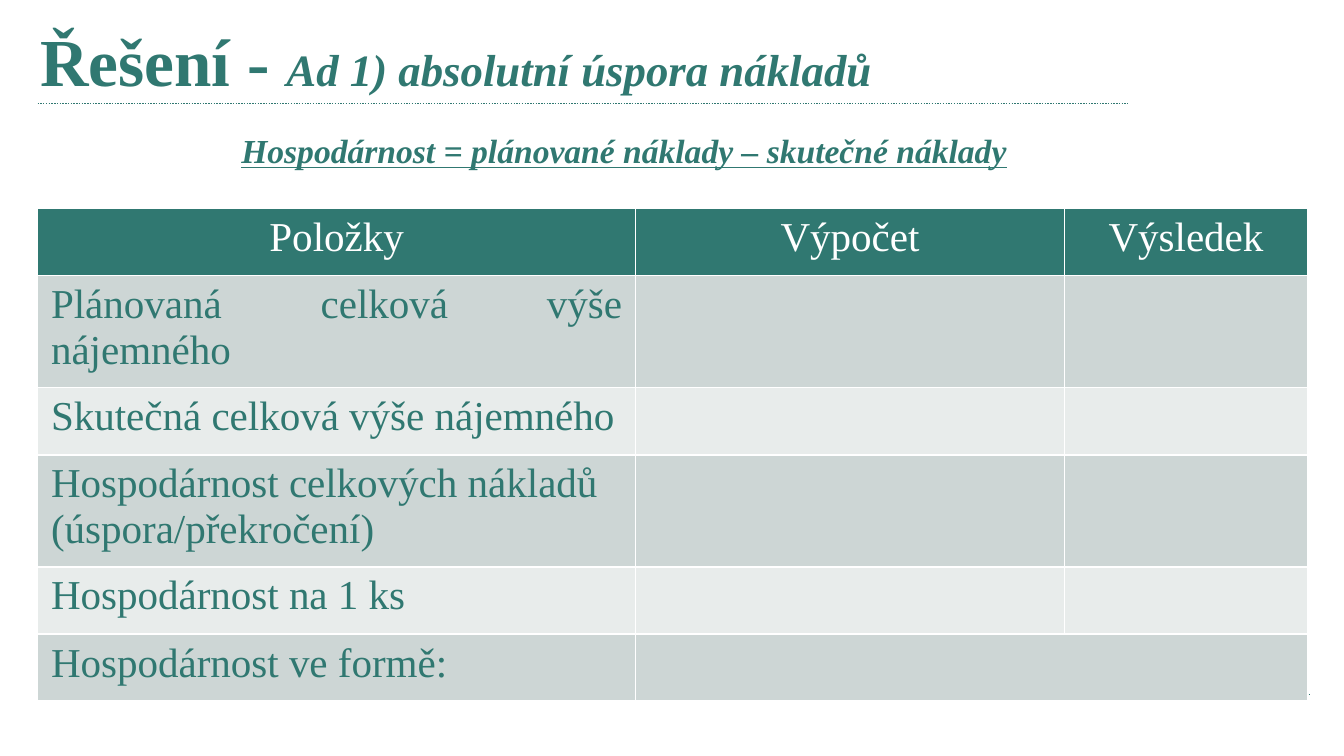
from dataclasses import dataclass

from lxml import etree
from pptx import Presentation
from pptx.dml.color import RGBColor
from pptx.enum.dml import MSO_LINE
from pptx.enum.shapes import MSO_CONNECTOR
from pptx.enum.text import MSO_ANCHOR, PP_ALIGN
from pptx.oxml.ns import qn
from pptx.util import Inches, Pt

STRAIGHT = MSO_CONNECTOR.STRAIGHT
DOTTED = MSO_LINE.ROUND_DOT
MIDDLE = MSO_ANCHOR.MIDDLE
LEFT, CENTER, JUSTIFY = PP_ALIGN.LEFT, PP_ALIGN.CENTER, PP_ALIGN.JUSTIFY


@dataclass(frozen=True)
class Theme:
    font: str = "Times New Roman"
    teal: str = "307871"
    white: str = "FFFFFF"
    bands: tuple = ("CDD6D5", "E8ECEB")
    title: int = 36
    subtitle: int = 24
    formula: int = 18
    cell: int = 22
    rule: float = 0.75
    border: int = 1


THEME = Theme()

HEADERS = ("Položky", "Výpočet", "Výsledek")
ITEMS = (
    ("Plánovaná celková výše nájemného", JUSTIFY),
    ("Skutečná celková výše nájemného", JUSTIFY),
    ("Hospodárnost celkových nákladů (úspora/překročení)", LEFT),
    ("Hospodárnost na 1 ks", LEFT),
    ("Hospodárnost ve formě:", LEFT),
)
COLUMN_WIDTHS = (4.45, 3.19, 1.81)
ROW_HEIGHTS = (0.5, 0.81, 0.5, 0.82, 0.5, 0.5)


def style_font(font, size, color, bold=False, italic=False, underline=False):
    font.name = THEME.font
    font.size = Pt(size)
    font.color.rgb = RGBColor.from_string(color)
    font.bold, font.italic, font.underline = bold, italic, underline


def add_rule(slide, left, right, y):
    rule = slide.shapes.add_connector(
        STRAIGHT, Inches(left), Inches(y), Inches(right), Inches(y))
    rule.line.color.rgb = RGBColor.from_string(THEME.teal)
    rule.line.width = Pt(THEME.rule)
    rule.line.dash_style = DOTTED
    etree.SubElement(rule._element.spPr, qn("a:effectLst"))


def add_text(slide, left, top, width, height):
    box = slide.shapes.add_textbox(
        Inches(left), Inches(top), Inches(width), Inches(height))
    box.text_frame.word_wrap = True
    return box.text_frame


def add_title(slide):
    frame = add_text(slide, 0.2, 0.1, 8.82, 0.79)
    frame.vertical_anchor = MIDDLE
    # A deeper bottom margin lifts the title clear of the rule
    frame.margin_bottom = Inches(0.15)
    heading = frame.paragraphs[0].add_run()
    heading.text = "Řešení - "
    style_font(heading.font, THEME.title, THEME.teal, bold=True)
    topic = frame.paragraphs[0].add_run()
    topic.text = "Ad 1) absolutní úspora nákladů"
    style_font(topic.font, THEME.subtitle, THEME.teal, bold=True, italic=True)


def add_formula(slide):
    formula = add_text(slide, 0.43, 0.92, 8.43, 0.4).paragraphs[0]
    formula.text = "Hospodárnost = plánované náklady – skutečné náklady"
    formula.alignment = CENTER
    style_font(formula.runs[0].font, THEME.formula, THEME.teal,
               bold=True, italic=True, underline=True)


def format_cell(cell, fill, text="", color=THEME.teal, align=LEFT):
    # Borders come before the fill in the cell properties
    properties = cell._tc.get_or_add_tcPr()
    for side in ("a:lnL", "a:lnR", "a:lnT", "a:lnB"):
        border = etree.SubElement(properties, qn(side), w=str(Pt(THEME.border)))
        solid = etree.SubElement(border, qn("a:solidFill"))
        etree.SubElement(solid, qn("a:srgbClr"), val=THEME.white)
    cell.fill.solid()
    cell.fill.fore_color.rgb = RGBColor.from_string(fill)
    if text:
        paragraph = cell.text_frame.paragraphs[0]
        paragraph.text = text
        paragraph.alignment = align
        style_font(paragraph.runs[0].font, THEME.cell, color)


def add_cost_table(slide):
    table = slide.shapes.add_table(
        len(ROW_HEIGHTS), len(COLUMN_WIDTHS), Inches(0.28), Inches(1.55),
        Inches(sum(COLUMN_WIDTHS)), Inches(sum(ROW_HEIGHTS))).table
    for column, width in zip(table.columns, COLUMN_WIDTHS):
        column.width = Inches(width)
    for row, height in zip(table.rows, ROW_HEIGHTS):
        row.height = Inches(height)

    # Header row
    for column, header in enumerate(HEADERS):
        format_cell(table.cell(0, column), THEME.teal, header, THEME.white, CENTER)

    # Items with empty cells for the calculation and the result
    for row, (item, align) in enumerate(ITEMS, start=1):
        band = THEME.bands[(row - 1) % 2]
        format_cell(table.cell(row, 0), band, item, align=align)
        for column in (1, 2):
            format_cell(table.cell(row, column), band)
    last = len(ITEMS)
    table.cell(last, 1).merge(table.cell(last, 2))


def main():
    # Widescreen page, 16:9
    deck = Presentation()
    deck.slide_width = Inches(10)
    deck.slide_height = Inches(10 * 9 / 16)
    slide = deck.slides.add_slide(deck.slide_layouts[6])

    # Dotted rules under the title and at the foot
    add_rule(slide, 0.28, 8.39, 0.77)
    add_rule(slide, 0.28, 9.75, 5.17)

    # Content
    add_title(slide)
    add_formula(slide)
    add_cost_table(slide)
    deck.save("out.pptx")


if __name__ == "__main__":
    main()
